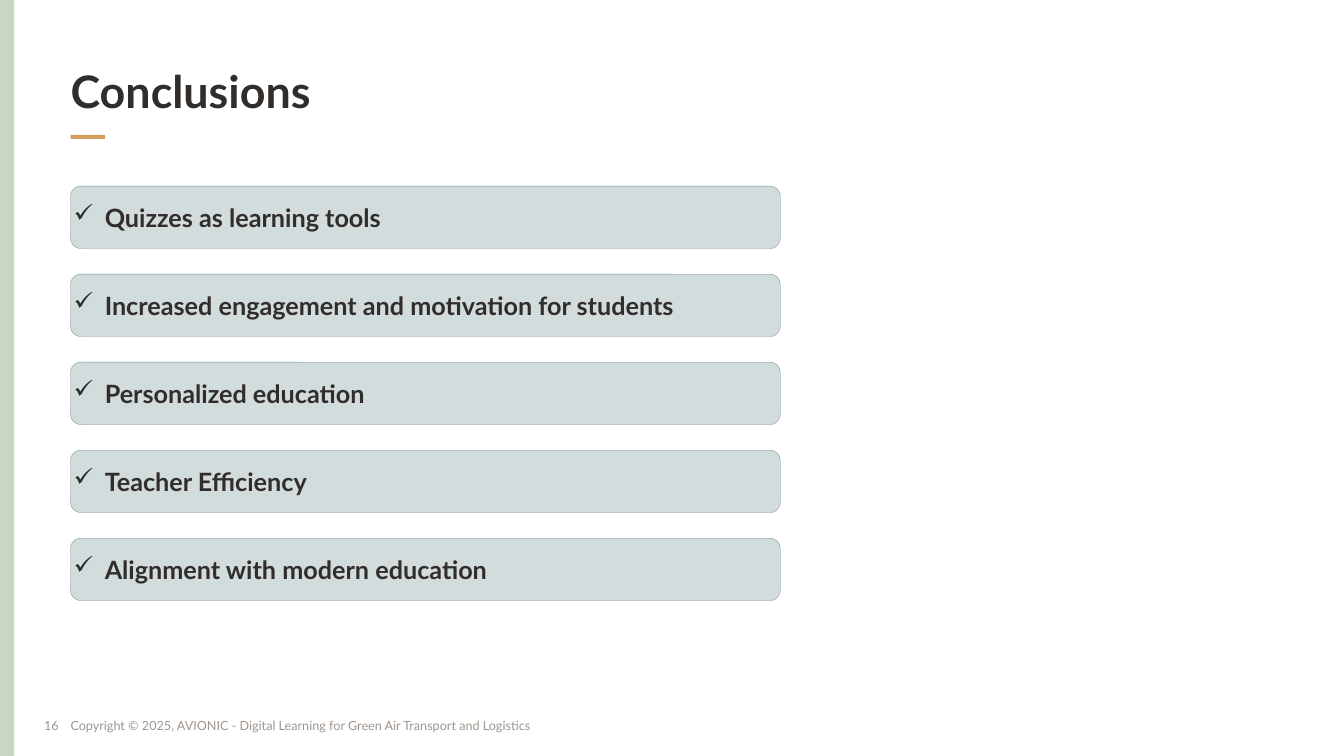
from lxml.etree import SubElement
from pptx import Presentation
from pptx.dml.color import RGBColor
from pptx.enum.shapes import MSO_SHAPE as Shape
from pptx.enum.text import MSO_ANCHOR as Anchor, MSO_AUTO_SIZE as AutoSize, PP_ALIGN as Align
from pptx.oxml.ns import qn
from pptx.util import Pt

COLORS = {
    "ink": "312D2A",
    "muted": "9E958E",
    "sage": "C8D7C4",
    "accent": "D39F5D",
    "card": "D2DCDC",
    "card_line": "7B9191",
}
FONT = "Lato"
SLIDE_WIDTH, SLIDE_HEIGHT = 960, 540
MARGIN = 50.4
CONCLUSIONS = [
    "Quizzes as learning tools",
    "Increased engagement and motivation for students",
    "Personalized education",
    "Teacher Efficiency",
    "Alignment with modern education",
]


def color(name):
    return RGBColor.from_string(COLORS[name])


def write_text(shape, text, size, ink="ink", bold=False, align=Align.LEFT,
               anchor=Anchor.MIDDLE, line_spacing=None, bullet=None, indent=22.3):
    frame = shape.text_frame
    frame.word_wrap = True
    frame.auto_size = AutoSize.NONE
    frame.vertical_anchor = anchor
    frame.margin_left = frame.margin_right = frame.margin_top = frame.margin_bottom = 0
    paragraph = frame.paragraphs[0]
    paragraph.alignment = align
    if line_spacing:
        paragraph.line_spacing = line_spacing
    if bullet:
        properties = paragraph._p.get_or_add_pPr()
        properties.set("marL", str(Pt(indent)))
        properties.set("indent", str(-Pt(indent)))
        SubElement(properties, qn("a:buChar")).set("char", bullet)
    run = paragraph.add_run()
    run.text = text
    run.font.name = FONT
    run.font.size = Pt(size)
    run.font.bold = bold
    run.font.color.rgb = color(ink)


def add_box(slide, kind, left, top, width, height, fill, line=None):
    shape = slide.shapes.add_shape(kind, Pt(left), Pt(top), Pt(width), Pt(height))
    shape.shadow.inherit = False
    shape.fill.solid()
    shape.fill.fore_color.rgb = color(fill)
    if line:
        shape.line.color.rgb = color(line)
        shape.line.width = Pt(0.25)
    else:
        shape.line.fill.background()
    return shape


def add_heading(slide, text, left, top, width, height):
    """Place the title and the short accent rule below it."""
    title = slide.shapes.title
    title.left, title.top, title.width, title.height = map(Pt, (left, top, width, height))
    write_text(title, text, 32, bold=True, anchor=Anchor.BOTTOM, line_spacing=0.95)
    add_box(slide, Shape.RECTANGLE, left, top + height + 11.3, 24.5, 2.9, "accent")


def add_checklist(slide, items, left, top, width, height, card_height=44.5):
    """Spread one card per item evenly over the height."""
    step = (height - card_height) / (len(items) - 1)
    for index, item in enumerate(items):
        card = add_box(slide, Shape.ROUNDED_RECTANGLE, left, top + index * step,
                       width, card_height, "card", "card_line")
        write_text(card, item, 18, bold=True, bullet="✓")


def add_footer(slide, number, notice, left, top, width, height):
    number_left = left - 28.1
    for text, text_left, text_width, align in (
        (number, number_left, 28.8, Align.CENTER),
        (notice, left, width, Align.LEFT),
    ):
        box = slide.shapes.add_textbox(Pt(text_left), Pt(top), Pt(text_width), Pt(height))
        write_text(box, text, 9, ink="muted", align=align)


def main():
    presentation = Presentation()
    presentation.slide_width, presentation.slide_height = Pt(SLIDE_WIDTH), Pt(SLIDE_HEIGHT)
    slide = presentation.slides.add_slide(presentation.slide_layouts[5])
    add_box(slide, Shape.RECTANGLE, 0, 0, 10.2, SLIDE_HEIGHT, "sage")
    add_heading(slide, "Conclusions", MARGIN, 20.2, 865.4, 64.8)
    add_checklist(slide, CONCLUSIONS, MARGIN, 133, 507, 296)
    add_footer(slide, "16",
               "Copyright © 2025, AVIONIC - Digital Learning for Green Air Transport and Logistics",
               MARGIN, 504, 452, 28.8)
    presentation.save("out.pptx")


if __name__ == "__main__":
    main()
